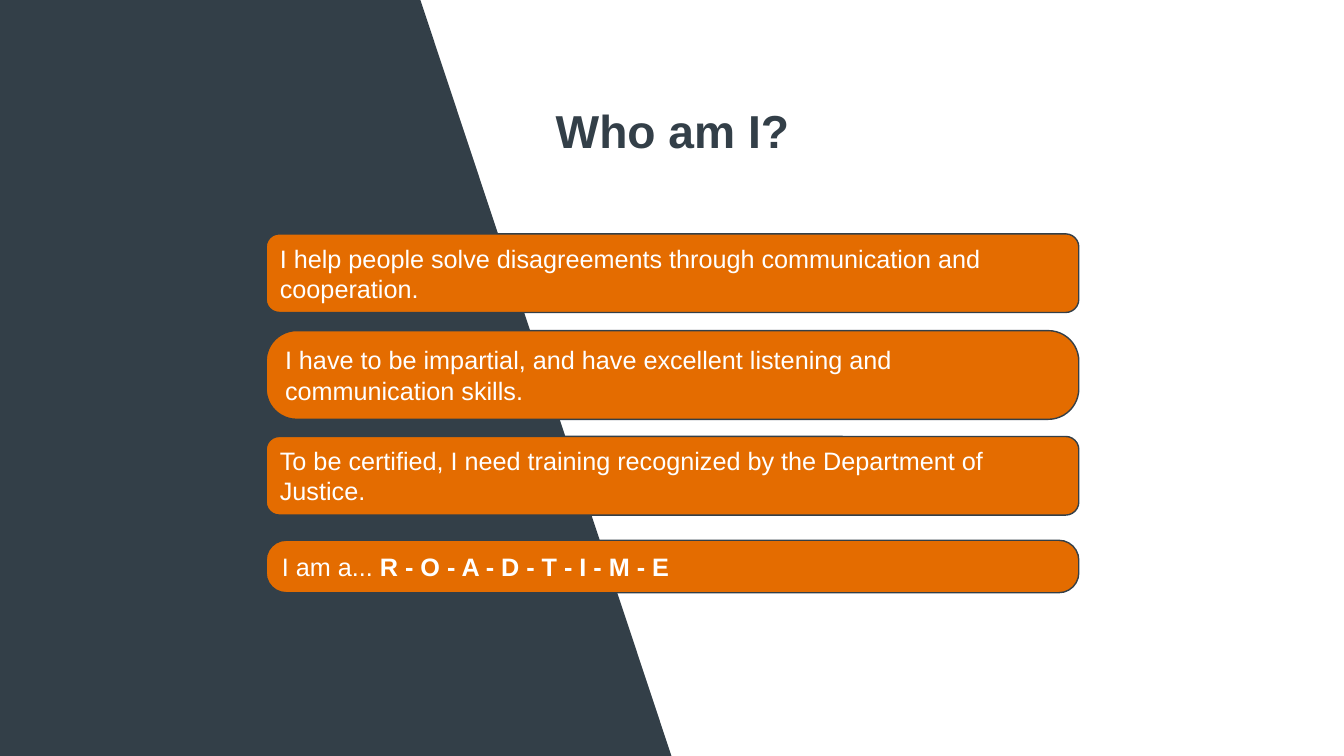
from dataclasses import dataclass

from pptx import Presentation
from pptx.dml.color import RGBColor
from pptx.enum.shapes import MSO_SHAPE
from pptx.enum.text import MSO_ANCHOR, PP_ALIGN
from pptx.util import Inches, Pt

ROUNDED = MSO_SHAPE.ROUNDED_RECTANGLE
MIDDLE = MSO_ANCHOR.MIDDLE
LEFT, CENTER = PP_ALIGN.LEFT, PP_ALIGN.CENTER
TITLE_ONLY = 5


@dataclass(frozen=True)
class Theme:
    slate: RGBColor = RGBColor(0x33, 0x3F, 0x48)
    orange: RGBColor = RGBColor(0xE4, 0x6C, 0x00)
    white: RGBColor = RGBColor(0xFF, 0xFF, 0xFF)
    font: str = "Arial"
    title_size: Pt = Pt(33)
    clue_size: Pt = Pt(18)
    outline: Pt = Pt(1)


THEME = Theme()
WIDTH, HEIGHT = 13.33, 7.5
PANEL_CORNERS = [(0, 0), (4.17, 0), (6.66, HEIGHT), (0, HEIGHT)]
CLUE_LEFT, CLUE_WIDTH = 2.64, 8.06
CLUES = [
    (2.32, 0.78, 0.167, [("I help people solve disagreements through communication and cooperation.", False)]),
    (3.28, 0.88, 0.344, [("I have to be impartial, and have excellent listening and communication skills.", False)]),
    (4.33, 0.78, 0.167, [("To be certified, I need training recognized by the Department of Justice.", False)]),
    (5.36, 0.52, 0.38, [("I am a... ", False), ("R - O - A - D - T - I - M - E", True)]),
]


def write_text(shape, runs, size, color, alignment):
    frame = shape.text_frame
    frame.word_wrap = True
    frame.vertical_anchor = MIDDLE
    paragraph = frame.paragraphs[0]
    paragraph.alignment = alignment
    for text, bold in runs:
        run = paragraph.add_run()
        run.text = text
        run.font.color.rgb = color
        font_format = {"name": THEME.font, "size": size, "bold": bold}
        for name, value in font_format.items():
            setattr(run.font, name, value)


def set_title(slide, text):
    title = slide.shapes.title
    position = {"left": 4.08, "top": 0.96, "width": 5.18, "height": 0.66}
    for name, value in position.items():
        setattr(title, name, Inches(value))
    write_text(title, [(text, True)], THEME.title_size, THEME.slate, CENTER)


def add_panel(slide):
    corners = [(Inches(x), Inches(y)) for x, y in PANEL_CORNERS]
    builder = slide.shapes.build_freeform(*corners[0])
    builder.add_line_segments(corners[1:], close=True)
    panel = builder.convert_to_shape()
    panel.shadow.inherit = False
    panel.fill.solid()
    panel.fill.fore_color.rgb = THEME.slate
    panel.line.fill.background()


def add_clue(slide, top, height, rounding, runs):
    clue = slide.shapes.add_shape(
        ROUNDED, Inches(CLUE_LEFT), Inches(top), Inches(CLUE_WIDTH), Inches(height)
    )
    clue.adjustments[0] = rounding
    clue.shadow.inherit = False
    clue.fill.solid()
    clue.fill.fore_color.rgb = THEME.orange
    clue.line.color.rgb = THEME.slate
    clue.line.width = THEME.outline
    write_text(clue, runs, THEME.clue_size, THEME.white, LEFT)


def main():
    presentation = Presentation()
    presentation.slide_width = Inches(WIDTH)
    presentation.slide_height = Inches(HEIGHT)
    slide = presentation.slides.add_slide(presentation.slide_layouts[TITLE_ONLY])
    add_panel(slide)
    set_title(slide, "Who am I?")
    for clue in CLUES:
        add_clue(slide, *clue)
    presentation.save("out.pptx")


if __name__ == "__main__":
    main()
